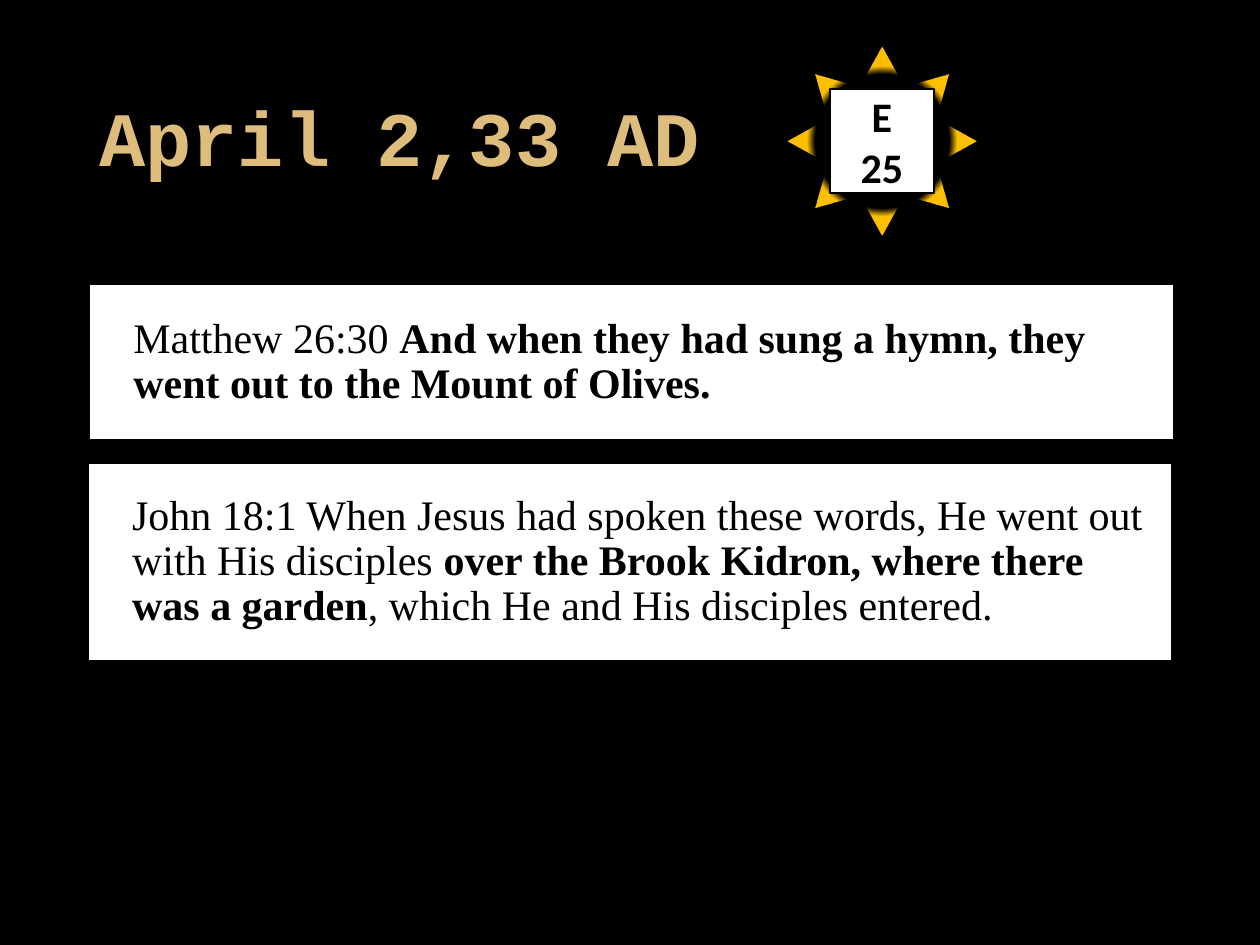
from dataclasses import dataclass

from lxml import etree
from pptx import Presentation
from pptx.dml.color import RGBColor as RGB
from pptx.enum.shapes import MSO_SHAPE as Kind
from pptx.enum.text import MSO_ANCHOR as Anchor, PP_ALIGN as Align
from pptx.oxml.ns import qn
from pptx.util import Inches, Pt


@dataclass(frozen=True)
class Theme:
    black: RGB = RGB(0, 0, 0)
    white: RGB = RGB(255, 255, 255)
    gold: RGB = RGB(0xDE, 0xBD, 0x7C)
    glow: str = "FFFF00"
    ray: str = "FFC000"
    head: str = "Courier New"
    verse: str = "Times New Roman"
    badge: str = "Calibri"
    big: int = 44
    base: int = 24


THEME = Theme()
WIDE, HIGH = Inches(10), Inches(7.5)


def area(left, top, width, height):
    """Turn percentages of the slide into lengths."""
    shares = zip((left, top, width, height), (WIDE, HIGH, WIDE, HIGH))
    return [int(share * full / 100) for share, full in shares]


def style(run, face, size, color, bold):
    font = run.font
    font.name, font.size, font.bold = face, Pt(size), bold
    font.color.rgb = color


def panel(slide, box, edge):
    """White rectangle with a black outline and centred-height text."""
    shape = slide.shapes.add_shape(Kind.RECTANGLE, *area(*box))
    shape.shadow.inherit = False
    shape.fill.solid()
    shape.fill.fore_color.rgb = THEME.white
    shape.line.color.rgb = THEME.black
    shape.line.width = Pt(edge)
    shape.text_frame.word_wrap = True
    shape.text_frame.vertical_anchor = Anchor.MIDDLE
    return shape


def title(slide, box, text):
    frame = slide.shapes.add_textbox(*area(*box)).text_frame
    frame.word_wrap = True
    frame.vertical_anchor = Anchor.MIDDLE
    frame.text = text
    para = frame.paragraphs[0]
    para.line_spacing = 0.9
    style(para.runs[0], THEME.head, THEME.big, THEME.gold, True)


def verse(slide, box, parts):
    """Scripture panel; parts are (text, bold) pairs."""
    para = panel(slide, box, 2).text_frame.paragraphs[0]
    para.alignment = Align.LEFT
    para.line_spacing = 0.9
    props = para._p.get_or_add_pPr()
    props.set("marL", str(Inches(0.26)))
    props.set("indent", "0")
    for text, bold in parts:
        run = para.add_run()
        run.text = text
        style(run, THEME.verse, THEME.base, THEME.black, bold)


def sun(slide, box):
    """Sun whose radial fill is clear in the middle."""
    shape = slide.shapes.add_shape(Kind.SUN, *area(*box))
    shape.shadow.inherit = False
    shape.adjustments[0] = 0.19
    shape.line.fill.background()
    shape.fill.background()
    grad = etree.Element(qn("a:gradFill"), rotWithShape="1")
    stops = etree.SubElement(grad, qn("a:gsLst"))
    for pos, color, alpha in ((0, THEME.glow, 0), (50, THEME.ray, 0),
                              (56, THEME.ray, 100)):
        stop = etree.SubElement(stops, qn("a:gs"), pos=str(pos * 1000))
        tint = etree.SubElement(stop, qn("a:srgbClr"), val=color)
        etree.SubElement(tint, qn("a:alpha"), val=str(alpha * 1000))
    way = etree.SubElement(grad, qn("a:path"), {"path": "circle"})
    mid = dict.fromkeys("ltrb", "50000")
    etree.SubElement(way, qn("a:fillToRect"), mid)
    props = shape._element.spPr
    props.replace(props.find(qn("a:noFill")), grad)


def badge(slide, box, text):
    frame = panel(slide, box, 1).text_frame
    frame.text = text
    for para in frame.paragraphs:
        para.alignment = Align.CENTER
        style(para.runs[0], THEME.badge, THEME.base, THEME.black, True)


def main():
    deck = Presentation()
    deck.slide_width, deck.slide_height = WIDE, HIGH
    slide = deck.slides.add_slide(deck.slide_layouts[6])
    back = slide.background.fill
    back.solid()
    back.fore_color.rgb = THEME.black

    # Verses
    verse(slide, (7, 30, 86.2, 16.67), [
        ("Matthew 26:30 ", False),
        ("And when they had sung a hymn, they went out to the Mount "
         "of Olives.", True)])
    verse(slide, (6.9, 48.93, 86.2, 21.07), [
        ("John 18:1 When Jesus had spoken these words, He went out with "
         "His disciples ", False),
        ("over the Brook Kidron, where there was a garden", True),
        (", which He and His disciples entered.", False)])

    # Date
    title(slide, (6.9, 5.33, 86.2, 19.33), "April 2,33 AD")

    # Sun with the day badge at its centre
    left, top, width, height = 62.5, 4.93, 15, 20
    sun(slide, (left, top, width, height))
    wide, high = 8.3, 11.07
    badge(slide, (left + (width - wide) / 2, top + (height - high) / 2,
                  wide, high), "E\n25")

    deck.save("out.pptx")


if __name__ == "__main__":
    main()
